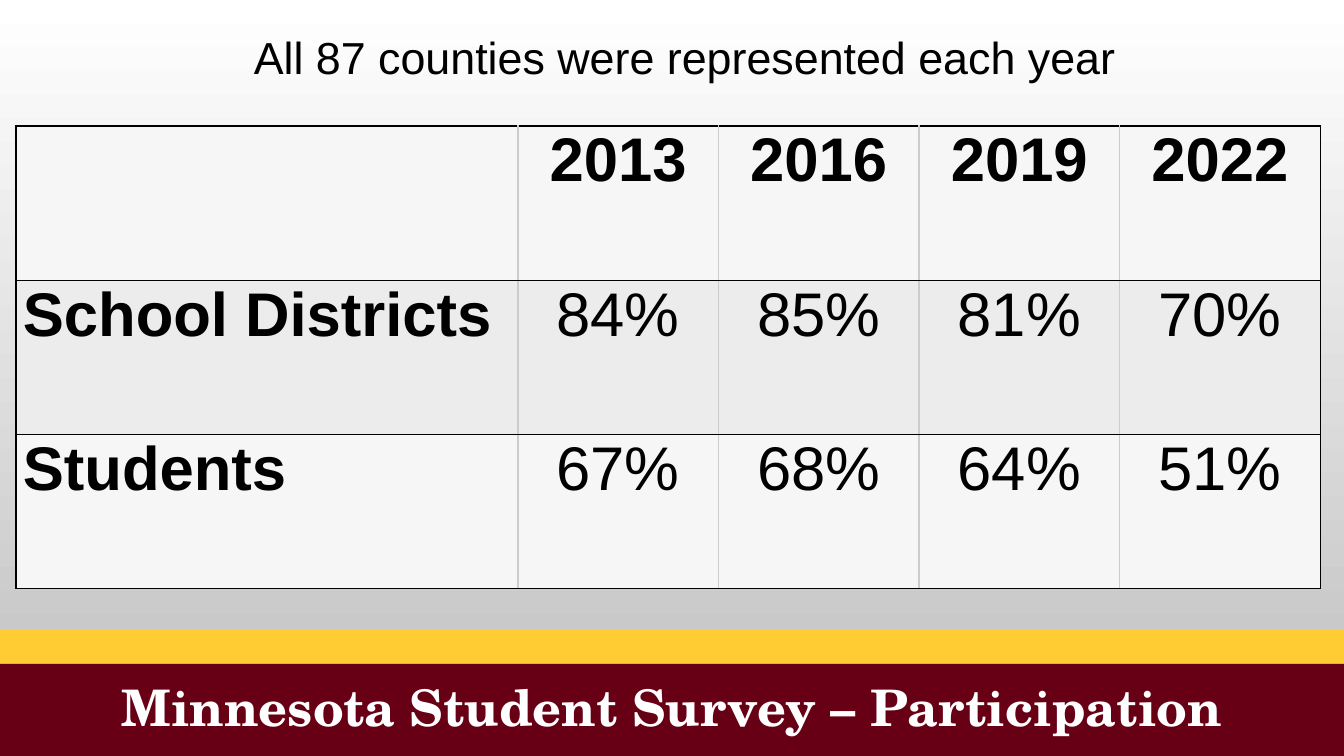
from lxml.etree import SubElement
from pptx import Presentation
from pptx.dml.color import RGBColor
from pptx.enum.shapes import MSO_SHAPE
from pptx.enum.text import MSO_ANCHOR, MSO_AUTO_SIZE, PP_ALIGN
from pptx.oxml.ns import qn
from pptx.util import Pt

TITLE = "Minnesota Student Survey – Participation"
NOTE = "All 87 counties were represented each year"
ROWS = [
    ("", "2013", "2016", "2019", "2022"),
    ("School Districts", "84%", "85%", "81%", "70%"),
    ("Students", "67%", "68%", "64%", "51%"),
]
COLORS = {
    "maroon": "670015", "gold": "FFCC33", "white": "FFFFFF", "black": "000000",
    "gray": "BFBFBF", "rule": "CCCCCC", "light": "F6F6F6", "shade": "ECECEC",
}
BANDS = [("maroon", 0, 474, 960, 67.5), ("gold", 0, 450, 960, 24)]
LABEL_WIDTH, YEAR_WIDTH, ROW_HEIGHT = 358.56, 143.28, 110.2


def color(name):
    return RGBColor.from_string(COLORS[name])


def write(frame, text, size, font="Arial", ink="black", bold=False, align=PP_ALIGN.LEFT):
    para = frame.paragraphs[0]
    para.alignment = align
    span = para.add_run()
    span.text = text
    span.font.name = font
    span.font.size = Pt(size)
    span.font.bold = bold
    span.font.color.rgb = color(ink)
    return para


def set_borders(cell, **edges):
    """Draw 1 pt cell edges, before the cell fill is set; keys are L, R, T, B."""
    properties = cell._tc.get_or_add_tcPr()
    for edge, name in edges.items():
        line = SubElement(properties, qn(f"a:ln{edge}"), w=str(Pt(1)))
        fill = SubElement(line, qn("a:solidFill"))
        SubElement(fill, qn("a:srgbClr"), val=COLORS[name])


def set_background(page):
    fill = page.background.fill
    fill.gradient()
    fill.gradient_angle = 270
    for stop, name in zip(fill.gradient_stops, ("white", "gray")):
        stop.color.rgb = color(name)


def add_title(page):
    title = page.shapes.title
    title.left, title.top, title.width, title.height = Pt(0), Pt(474), Pt(960), Pt(66)
    frame = title.text_frame
    frame.auto_size = MSO_AUTO_SIZE.NONE
    frame.vertical_anchor = MSO_ANCHOR.MIDDLE
    para = write(frame, TITLE, 36, font="TeX Gyre Schola", ink="white",
                 bold=True, align=PP_ALIGN.CENTER)
    para.line_spacing = 0.9
    for name, *place in BANDS:
        band = page.shapes.add_shape(MSO_SHAPE.RECTANGLE, *map(Pt, place))
        band.shadow.inherit = False
        band.fill.solid()
        band.fill.fore_color.rgb = color(name)
        band.line.fill.background()
        title.element.addprevious(band.element)  # keeps the title in front


def add_participation_table(page):
    last = len(ROWS[0]) - 1
    table = page.shapes.add_table(
        len(ROWS), last + 1, Pt(11.4), Pt(90),
        Pt(LABEL_WIDTH + last * YEAR_WIDTH), Pt(len(ROWS) * ROW_HEIGHT)).table
    table.first_row = table.horz_banding = False
    for c, column in enumerate(table.columns):
        column.width = Pt(YEAR_WIDTH if c else LABEL_WIDTH)
    for r, values in enumerate(ROWS):
        table.rows[r].height = Pt(ROW_HEIGHT)
        for c, value in enumerate(values):
            cell = table.cell(r, c)
            set_borders(cell, L="rule" if c else "black",
                        R="black" if c == last else "rule", T="black", B="black")
            cell.fill.solid()
            cell.fill.fore_color.rgb = color("shade" if r % 2 else "light")
            cell.margin_left = cell.margin_right = Pt(5)
            cell.margin_top = cell.margin_bottom = Pt(0)
            if value:
                write(cell.text_frame, value, 44, bold=r == 0 or c == 0,
                      align=PP_ALIGN.CENTER if c else PP_ALIGN.LEFT)


def add_note(page):
    box = page.shapes.add_textbox(Pt(174.2), Pt(18), Pt(635), Pt(46))
    box.text_frame.word_wrap = False
    box.text_frame.auto_size = MSO_AUTO_SIZE.SHAPE_TO_FIT_TEXT
    write(box.text_frame, NOTE, 32)


def main():
    deck = Presentation()
    deck.slide_width, deck.slide_height = Pt(960), Pt(540)
    page = deck.slides.add_slide(deck.slide_layouts.get_by_name("Title Only"))
    set_background(page)
    add_title(page)
    add_participation_table(page)
    add_note(page)
    deck.save("out.pptx")


if __name__ == "__main__":
    main()
